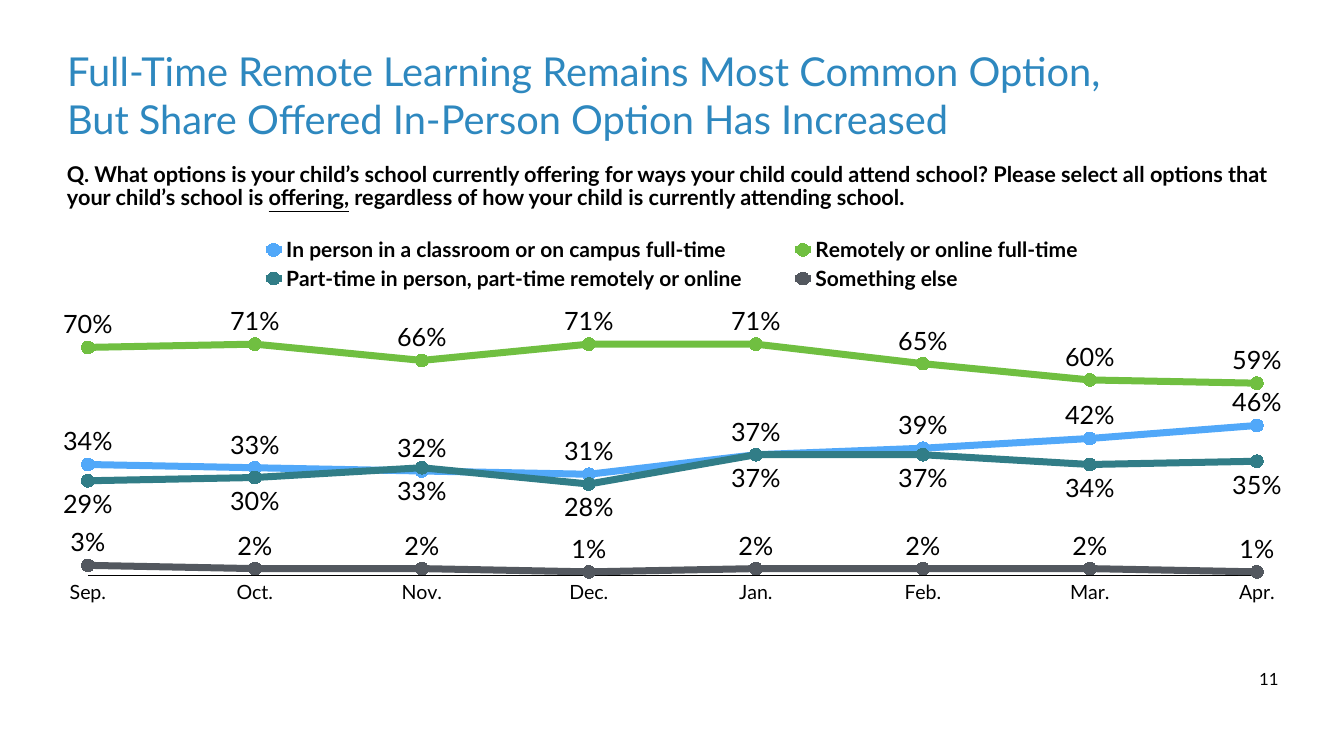
from pptx import Presentation
from pptx.chart.data import CategoryChartData
from pptx.dml.color import RGBColor
from pptx.enum.chart import (XL_CHART_TYPE, XL_LABEL_POSITION, XL_LEGEND_POSITION,
                             XL_MARKER_STYLE, XL_TICK_LABEL_POSITION, XL_TICK_MARK)
from pptx.enum.text import MSO_ANCHOR, MSO_AUTO_SIZE, PP_ALIGN
from pptx.oxml import parse_xml
from pptx.oxml.ns import nsdecls, qn
from pptx.util import Inches, Pt

FONT = "Lato"
BLACK = RGBColor(0x00, 0x00, 0x00)
TITLE_BLUE = RGBColor(0x2E, 0x88, 0xBF)
SKY = RGBColor(0x51, 0xA8, 0xF9)
GREEN = RGBColor(0x70, 0xBF, 0x41)
TEAL = RGBColor(0x31, 0x7D, 0x87)
SLATE = RGBColor(0x53, 0x58, 0x5F)
ABOVE, BELOW = XL_LABEL_POSITION.ABOVE, XL_LABEL_POSITION.BELOW

TITLE = [
    ["Full-Time Remote Learning Remains Most Common Option,"],
    ["But Share Offered In-Person Option Has Increased"],
]
UNDERLINED = "offering,"
QUESTION = [[
    "Q. What options is your child’s school currently offering for ways your child could "
    "attend school? Please select all options that your child’s school is ",
    UNDERLINED,
    " regardless of how your child is currently attending school.",
]]
PAGE_NUMBER = [["11"]]
MONTHS = ["Sep.", "Oct.", "Nov.", "Dec.", "Jan.", "Feb.", "Mar.", "Apr."]
SERIES = [
    ("In person in a classroom or on campus full-time", SKY, ABOVE,
     [0.34, 0.33, 0.32, 0.31, 0.37, 0.39, 0.42, 0.46]),
    ("Remotely or online full-time", GREEN, ABOVE,
     [0.70, 0.71, 0.66, 0.71, 0.71, 0.65, 0.60, 0.59]),
    ("Part-time in person, part-time remotely or online", TEAL, BELOW,
     [0.29, 0.30, 0.33, 0.28, 0.37, 0.37, 0.34, 0.35]),
    ("Something else", SLATE, ABOVE,
     [0.03, 0.02, 0.02, 0.01, 0.02, 0.02, 0.02, 0.01]),
]

WIDTH, HEIGHT = 26.67, 15
MARGIN = 1.25
TEXT_WIDTH = WIDTH - 2 * MARGIN


def set_font(font, size, color=BLACK, bold=False):
    font.name, font.size, font.bold = FONT, Pt(size), bold
    font.color.rgb = color


def write(box, paragraphs, size, color=BLACK, bold=False, align=PP_ALIGN.LEFT,
          anchor=MSO_ANCHOR.TOP, spacing=None, wrap=True):
    """Fill a shape with paragraphs, each given as a list of runs."""
    frame = box.text_frame
    frame.auto_size = MSO_AUTO_SIZE.NONE
    frame.word_wrap = wrap
    frame.vertical_anchor = anchor
    frame.margin_left = frame.margin_right = Inches(0.08)
    frame.margin_top = frame.margin_bottom = Inches(0.08)
    for index, spans in enumerate(paragraphs):
        para = frame.paragraphs[0] if index == 0 else frame.add_paragraph()
        para.alignment = align
        para.line_spacing = spacing
        para.space_before = Pt(0)
        for text in spans:
            span = para.add_run()
            span.text = text
            set_font(span.font, size, color, bold)
            if text == UNDERLINED:
                span.font.underline = True


def place(element, index, x, y, w, h, inner=False):
    """Give a chart part a manual layout, in shares of the chart's size."""
    for old in element.findall(qn("c:layout")):
        element.remove(old)
    target = '<c:layoutTarget val="inner"/>' if inner else ""
    element.insert(index, parse_xml(
        f'<c:layout {nsdecls("c")}><c:manualLayout>{target}'
        '<c:xMode val="edge"/><c:yMode val="edge"/>'
        f'<c:x val="{x}"/><c:y val="{y}"/><c:w val="{w}"/><c:h val="{h}"/>'
        '</c:manualLayout></c:layout>'))


def style_axes(chart):
    months, shares = chart.category_axis, chart.value_axis
    for axis in (months, shares):
        axis.has_major_gridlines = False
        axis.major_tick_mark = axis.minor_tick_mark = XL_TICK_MARK.NONE
        set_font(axis.tick_labels.font, 28)
    months.tick_label_position = XL_TICK_LABEL_POSITION.LOW
    months.format.line.color.rgb = BLACK
    months.format.line.width = Pt(1)
    shares.tick_label_position = XL_TICK_LABEL_POSITION.NONE
    shares.format.line.fill.background()
    shares.minimum_scale, shares.maximum_scale, shares.major_unit = 0, 0.8, 0.2
    shares._element.find(qn("c:crosses")).addnext(
        parse_xml(f'<c:crossBetween {nsdecls("c")} val="midCat"/>'))


def style_series(series, color, label_position):
    series.smooth = False
    series.format.line.color.rgb = color
    series.format.line.width = Pt(10)
    series.marker.style = XL_MARKER_STYLE.CIRCLE
    series.marker.size = 18
    series.marker.format.fill.solid()
    series.marker.format.fill.fore_color.rgb = color
    series.marker.format.line.color.rgb = color
    labels = series.data_labels
    labels.show_value = True
    labels.position = label_position
    labels.number_format, labels.number_format_is_linked = "#,##0%", False
    set_font(labels.font, 36)


def add_trend_chart(page, left, top, width, height):
    data = CategoryChartData(number_format="0%")
    data.categories = MONTHS
    for name, _, _, values in SERIES:
        data.add_series(name, values)
    chart = page.shapes.add_chart(XL_CHART_TYPE.LINE_MARKERS, Inches(left), Inches(top),
                                  Inches(width), Inches(height), data).chart
    set_font(chart.font, 10)
    chart.has_title = False
    chart.plots[0].vary_by_categories = False
    style_axes(chart)
    for series, (_, color, label_position, _) in zip(chart.plots[0].series, SERIES):
        style_series(series, color, label_position)
    chart.has_legend = True
    chart.legend.position = XL_LEGEND_POSITION.TOP
    chart.legend.include_in_layout = True
    set_font(chart.legend.font, 30, bold=True)
    place(chart.legend._element, 1, 0.13, 0, 0.74, 0.16)
    plot_area = chart._chartSpace.find(".//" + qn("c:plotArea"))
    place(plot_area, 0, 0.022, 0.213, 0.957, 0.684, inner=True)


def main():
    deck = Presentation()
    deck.slide_width, deck.slide_height = Inches(WIDTH), Inches(HEIGHT)
    page = deck.slides.add_slide(deck.slide_layouts[5])

    title = page.shapes.title
    title.left, title.top = Inches(MARGIN), Inches(0.84)
    title.width, title.height = Inches(TEXT_WIDTH), Inches(2.08)
    write(title, TITLE, 56.9, color=TITLE_BLUE, anchor=MSO_ANCHOR.MIDDLE)

    question = page.shapes.add_textbox(Inches(MARGIN), Inches(3.16),
                                       Inches(TEXT_WIDTH), Inches(1.18))
    write(question, QUESTION, 31, bold=True, spacing=0.9)

    add_trend_chart(page, 1.21, 4.64, 24.24, 7.55)

    number = page.shapes.add_textbox(Inches(24.96), Inches(13.19), Inches(0.44), Inches(0.56))
    write(number, PAGE_NUMBER, 24, align=PP_ALIGN.CENTER, wrap=False)

    deck.save("out.pptx")


if __name__ == "__main__":
    main()
